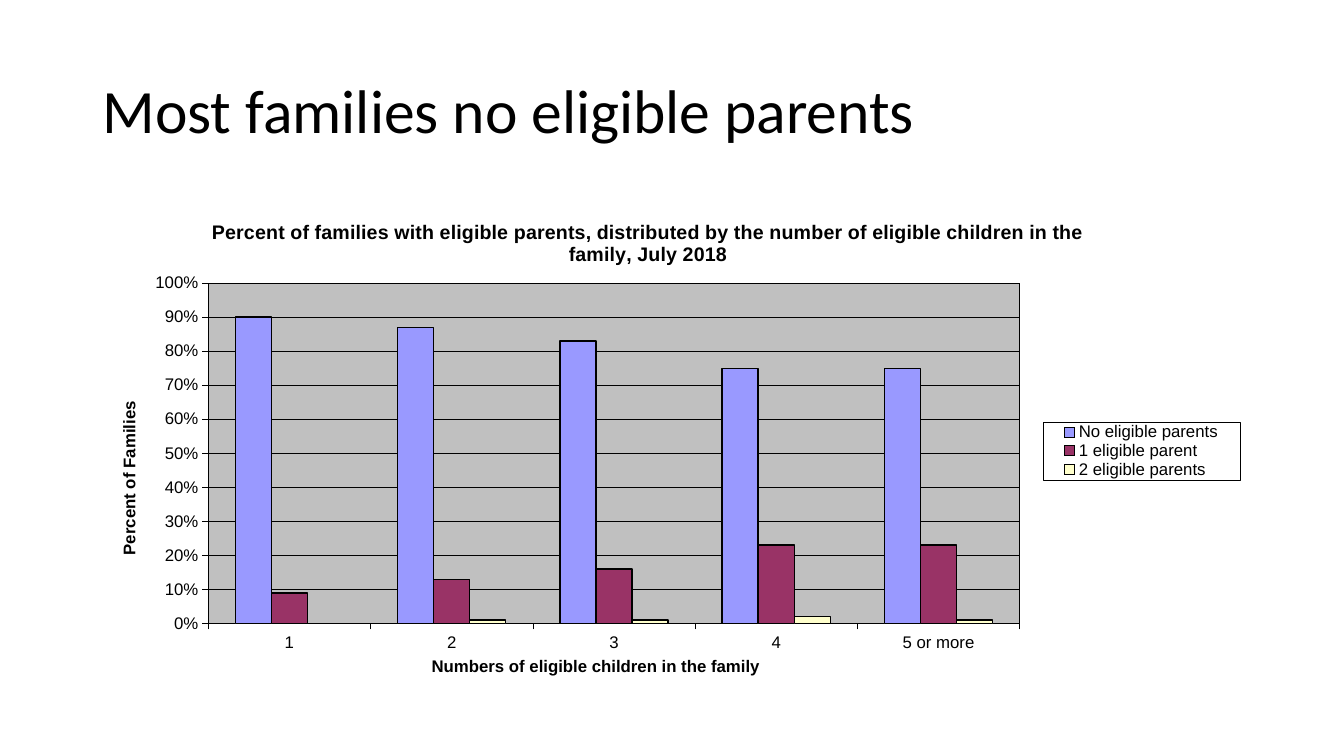
"""Build a slide with a clustered column chart of families by eligible parents."""
from lxml import etree
from pptx import Presentation
from pptx.chart.data import CategoryChartData
from pptx.dml.color import RGBColor
from pptx.enum.chart import XL_CHART_TYPE, XL_LEGEND_POSITION, XL_TICK_MARK
from pptx.enum.text import MSO_ANCHOR, PP_ALIGN
from pptx.oxml import parse_xml
from pptx.oxml.ns import nsdecls, qn
from pptx.util import Pt

COLUMNS = XL_CHART_TYPE.COLUMN_CLUSTERED
LEGEND_RIGHT = XL_LEGEND_POSITION.RIGHT
TICK_OUT, TICK_NONE = XL_TICK_MARK.OUTSIDE, XL_TICK_MARK.NONE
MIDDLE, LEFT = MSO_ANCHOR.MIDDLE, PP_ALIGN.LEFT

BLACK = RGBColor(0x00, 0x00, 0x00)
WHITE = RGBColor(0xFF, 0xFF, 0xFF)
SILVER = RGBColor(0xC0, 0xC0, 0xC0)
PERIWINKLE = RGBColor(0x99, 0x99, 0xFF)
PLUM = RGBColor(0x99, 0x33, 0x66)
CREAM = RGBColor(0xFF, 0xFF, 0xCC)

CATEGORIES = ["1", "2", "3", "4", "5 or more"]
SERIES = [
    ("No eligible parents", PERIWINKLE, (0.9, 0.87, 0.83, 0.75, 0.75)),
    ("1 eligible parent", PLUM, (0.09, 0.13, 0.16, 0.23, 0.23)),
    ("2 eligible parents", CREAM, (0, 0.01, 0.01, 0.02, 0.01)),
]


def set_font(font, size, name="Arial", bold=False):
    font.name, font.size, font.bold = name, Pt(size), bold
    font.color.rgb = BLACK


def set_line(line, width):
    line.color.rgb = BLACK
    line.width = Pt(width)


def write_text(tf, text, **font):
    p = tf.paragraphs[0]
    r = p.add_run()
    r.text = text
    set_font(r.font, **font)
    return p


def place(element, x, y, w=None, h=None, inner=False):
    """Set the manual layout of a chart part, in fractions of the chart."""
    for old in element.findall(qn("c:layout")):
        element.remove(old)
    layout = parse_xml(f"<c:layout {nsdecls('c')}/>")
    manual = etree.SubElement(layout, qn("c:manualLayout"))
    settings = [("layoutTarget", "inner" if inner else None),
                ("xMode", "edge"), ("yMode", "edge"),
                ("x", x), ("y", y), ("w", w), ("h", h)]
    for tag, value in settings:
        if value is not None:
            etree.SubElement(manual, qn(f"c:{tag}")).set("val", str(value))
    followers = [child for child in element
                 if child.tag in (qn("c:overlay"), qn("c:txPr"))]
    if followers:
        followers[0].addprevious(layout)
    else:
        element.insert(0, layout)


def box_format(fill):
    return parse_xml(
        f'<c:spPr {nsdecls("c", "a")}><a:solidFill><a:srgbClr val="{fill}"/></a:solidFill>'
        f'<a:ln w="{int(Pt(0.25))}"><a:solidFill><a:srgbClr val="{BLACK}"/></a:solidFill></a:ln></c:spPr>')


def add_chart_title(title, text, size, x, y):
    write_text(title.text_frame, text, size=size, bold=True)
    place(title._element, x, y)


def format_axis(axis, title, x, y):
    axis.major_tick_mark, axis.minor_tick_mark = TICK_OUT, TICK_NONE
    set_font(axis.tick_labels.font, 12)
    set_line(axis.format.line, 0.25)
    add_chart_title(axis.axis_title, title, 12, x, y)


def format_value_axis(axis):
    format_axis(axis, "Percent of Families", 0.02, 0.41)
    axis.axis_title.text_frame._txBody.bodyPr.set("rot", "-5400000")
    axis.minimum_scale, axis.maximum_scale, axis.major_unit = 0, 1, 0.1
    axis.tick_labels.number_format = "0%"
    axis.tick_labels.number_format_is_linked = False
    axis.has_major_gridlines = True
    set_line(axis.major_gridlines.format.line, 0.25)


def format_legend(chart):
    chart.has_legend = True
    legend = chart.legend
    legend.position = LEGEND_RIGHT
    set_font(legend.font, 12)
    place(legend._element, 0.82, 0.46, 0.17, 0.12)
    legend._element.find(qn("c:txPr")).addprevious(box_format(WHITE))


def add_title(s, text):
    title = s.shapes.title
    title.left, title.top, title.width, title.height = Pt(66), Pt(28.8), Pt(828), Pt(104.4)
    tf = title.text_frame
    tf.vertical_anchor = MIDDLE
    p = write_text(tf, text, size=44, name="Calibri")
    p.alignment, p.line_spacing = LEFT, 0.9


def add_families_chart(s):
    data = CategoryChartData(number_format="0%")
    data.categories = CATEGORIES
    for name, _, values in SERIES:
        data.add_series(name, values)
    chart = s.shapes.add_chart(COLUMNS, Pt(66), Pt(144), Pt(828), Pt(342.6), data).chart
    set_font(chart.font, 10)
    chart.has_title = True
    add_chart_title(chart.chart_title,
                    "Percent of families with eligible parents, distributed by "
                    "the number of eligible children in the family, July 2018",
                    14, 0.1, 0.03)
    format_axis(chart.category_axis, "Numbers of eligible children in the family", 0.29, 0.94)
    format_value_axis(chart.value_axis)
    format_legend(chart)

    plot = chart.plots[0]
    plot.gap_width, plot.overlap, plot.vary_by_categories = 150, 0, False
    for series, (_, color, _) in zip(plot.series, SERIES):
        series.format.fill.solid()
        series.format.fill.fore_color.rgb = color
        series.invert_if_negative = False
        set_line(series.format.line, 1)
    area = chart._chartSpace.chart.plotArea
    place(area, 0.1, 0.17, 0.7, 0.71, inner=True)
    area.append(box_format(SILVER))


def main():
    prs = Presentation()
    prs.slide_width, prs.slide_height = Pt(960), Pt(540)
    s = prs.slides.add_slide(prs.slide_layouts[5])
    add_title(s, "Most families no eligible parents")
    add_families_chart(s)
    prs.save("out.pptx")


if __name__ == "__main__":
    main()
